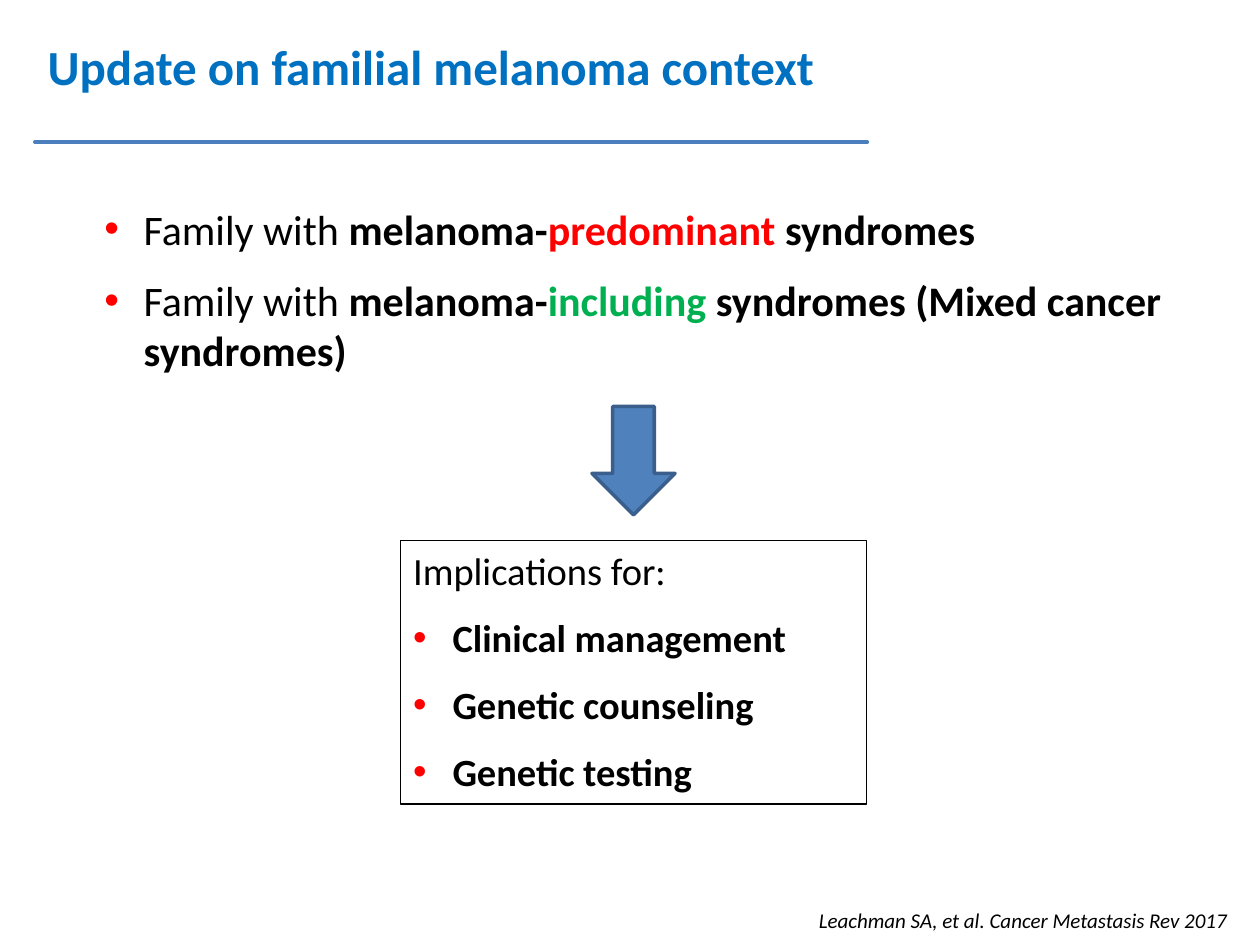
import pptx
import pptx.util
import pptx.dml.color
import pptx.enum.shapes
import pptx.enum.text
import pptx.oxml
import pptx.oxml.ns
from lxml import etree

Pt = pptx.util.Pt
qn = pptx.oxml.ns.qn
SHAPE = pptx.enum.shapes.MSO_SHAPE
ALIGN = pptx.enum.text.PP_ALIGN
BLACK = "000000"
WHITE = "FFFFFF"
RED = "FF0000"
GREEN = "00B050"


def rgb(value):
    return pptx.dml.color.RGBColor.from_string(value)


def set_frame(tf):
    tf.word_wrap = True
    tf.auto_size = pptx.enum.text.MSO_AUTO_SIZE.NONE
    tf.vertical_anchor = pptx.enum.text.MSO_ANCHOR.TOP


def format_run(r, size, color=BLACK, bold=False, italic=False):
    r.font.name = "Calibri"
    r.font.size = Pt(size)
    r.font.bold = bold
    r.font.italic = italic
    r.font.color.rgb = rgb(color)


def add_bullet(p):
    pPr = p._p.get_or_add_pPr()
    pPr.set("marL", str(Pt(22.5)))
    pPr.set("indent", str(Pt(-22.5)))
    color = etree.SubElement(pPr, qn("a:buClr"))
    etree.SubElement(color, qn("a:srgbClr"), val=RED)
    etree.SubElement(pPr, qn("a:buFont"), typeface="Arial")
    etree.SubElement(pPr, qn("a:buChar"), char="•")


def add_shape(s, kind, box, fill, line=None, width=0):
    sp = s.shapes.add_shape(kind, *map(Pt, box))
    sp.shadow.inherit = False
    sp.fill.solid()
    sp.fill.fore_color.rgb = rgb(fill)
    if line:
        sp.line.color.rgb = rgb(line)
        sp.line.width = Pt(width)
    else:
        sp.line.fill.background()
    return sp


def add_list(s, box, size, items, line=None):
    tf = add_shape(s, SHAPE.RECTANGLE, box, WHITE, line, 0.75).text_frame
    set_frame(tf)
    for i, (bulleted, parts) in enumerate(items):
        p = tf.paragraphs[0] if i == 0 else tf.add_paragraph()
        p.alignment = ALIGN.LEFT
        p.space_after = Pt(12)
        if bulleted:
            add_bullet(p)
        for text, color, bold in parts:
            r = p.add_run()
            r.text = text
            format_run(r, size, color, bold)


def add_title(s, text):
    sp = s.shapes.title
    sp.left, sp.top, sp.width, sp.height = map(Pt, (20, 17, 488, 41))
    tf = sp.text_frame
    tf.text = text
    set_frame(tf)
    p = tf.paragraphs[0]
    p.alignment = ALIGN.LEFT
    format_run(p.runs[0], 28, "0070C0", bold=True)


def add_rule(s, x1, x2, y):
    line = s.shapes.add_connector(
        pptx.enum.shapes.MSO_CONNECTOR.STRAIGHT, Pt(x1), Pt(y), Pt(x2), Pt(y))
    line.line.color.rgb = rgb("4B7EBC")
    line.line.width = Pt(2.25)
    line.line._get_or_add_ln().set("cap", "rnd")
    etree.SubElement(line._element.spPr, qn("a:effectLst"))


def add_citation(s, text):
    tf = s.shapes.add_textbox(*map(Pt, (382.5, 515, 326, 22))).text_frame
    tf.text = text
    set_frame(tf)
    p = tf.paragraphs[0]
    p.alignment = ALIGN.RIGHT
    format_run(p.runs[0], 12, italic=True)


def syndrome(word, color, ending):
    return True, [("Family with ", BLACK, False), ("melanoma-", BLACK, True),
                  (word + " ", color, True), (ending, BLACK, True)]


def main():
    prs = pptx.Presentation()
    prs.slide_width, prs.slide_height = Pt(720), Pt(540)
    s = prs.slides.add_slide(prs.slide_layouts[5])
    add_title(s, "Update on familial melanoma context")
    add_list(s, (52.5, 112.5, 619, 106.5), 24, [
        syndrome("predominant", RED, "syndromes"),
        syndrome("including", GREEN, "syndromes (Mixed cancer syndromes)"),
    ])
    topics = ["Clinical management", "Genetic counseling", "Genetic testing"]
    add_list(s, (229, 309, 266, 150.5), 22,
             [(False, [("Implications for:", BLACK, False)])]
             + [(True, [(topic, BLACK, True)]) for topic in topics], BLACK)
    add_rule(s, 20, 495.5, 81.25)
    add_shape(s, SHAPE.DOWN_ARROW, (338.25, 232.25, 47.5, 62),
              "4F81BD", "3A5F8C", 2)
    add_citation(s, "Leachman SA, et al. Cancer Metastasis Rev 2017")
    prs.save("out.pptx")


if __name__ == "__main__":
    main()
